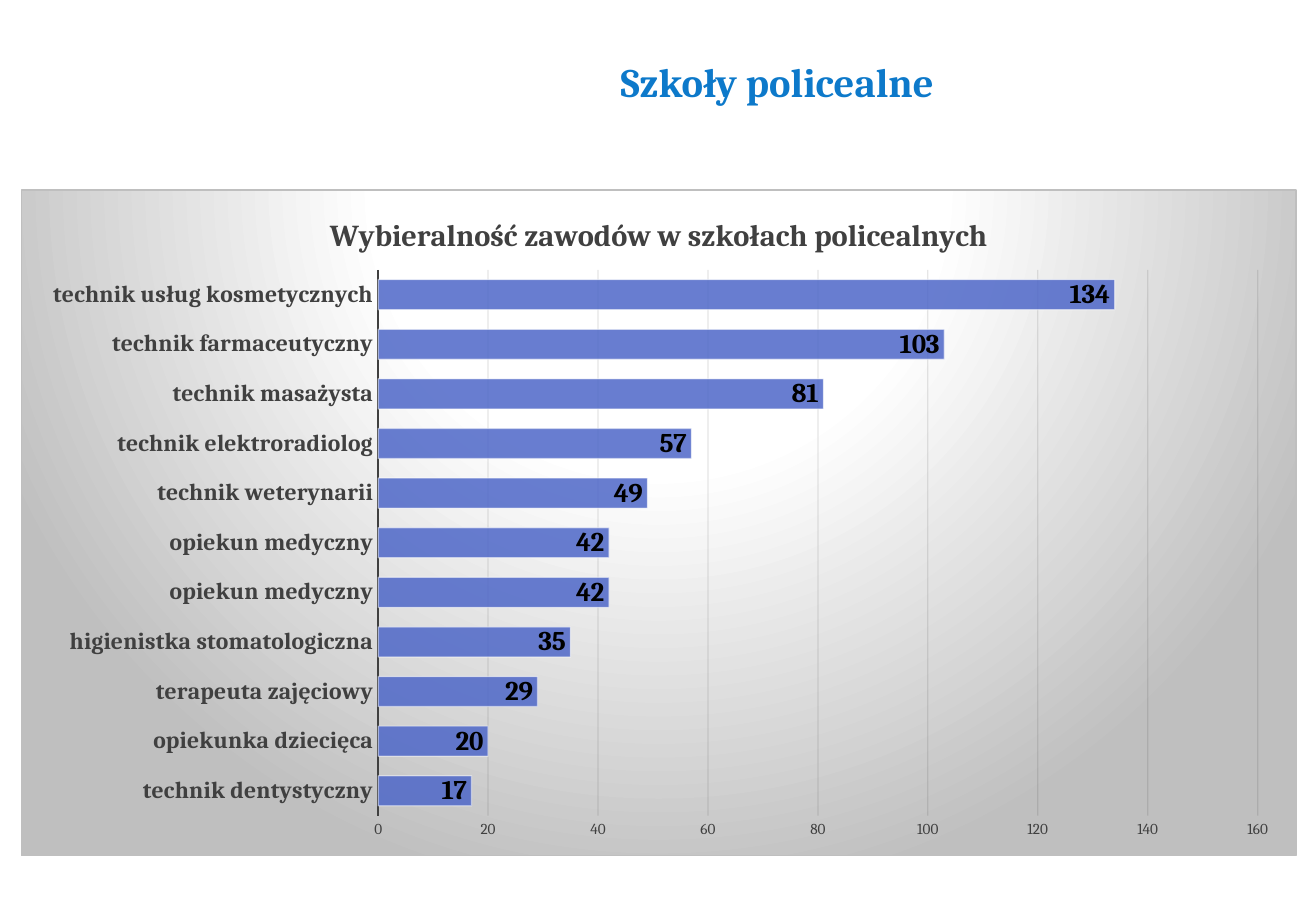
import lxml.etree
import pptx
import pptx.chart.data
import pptx.dml.color
import pptx.enum.chart
import pptx.enum.text
import pptx.oxml
import pptx.oxml.ns
import pptx.util
from pptx.util import Inches

RGBColor = pptx.dml.color.RGBColor
TITLE_BLUE = RGBColor(0x0D, 0x79, 0xCA)
BAR_BLUE = RGBColor(0x4E, 0x67, 0xC8)
DARK_GRAY = RGBColor(0x40, 0x40, 0x40)
GRID_BLACK = RGBColor(0x0D, 0x0D, 0x0D)
EDGE_GRAY = RGBColor(0xBF, 0xBF, 0xBF)
WHITE = RGBColor(0xFF, 0xFF, 0xFF)
BLACK = RGBColor(0x00, 0x00, 0x00)
FONT_NAME = "Cambria"

PROFESSIONS = [
    ("technik dentystyczny", 17),
    ("opiekunka dziecięca", 20),
    ("terapeuta zajęciowy", 29),
    ("higienistka stomatologiczna", 35),
    ("opiekun medyczny", 42),
    ("opiekun medyczny", 42),
    ("technik weterynarii", 49),
    ("technik elektroradiolog", 57),
    ("technik masażysta", 81),
    ("technik farmaceutyczny", 103),
    ("technik usług kosmetycznych", 134),
]


def format_font(font, size, color, bold=False):
    font.name = FONT_NAME
    font.size = pptx.util.Pt(size)
    font.bold = bold
    font.color.rgb = color


def write_text(text_frame, text, **font_format):
    paragraph = text_frame.paragraphs[0]
    paragraph.alignment = pptx.enum.text.PP_ALIGN.CENTER
    run = paragraph.add_run()
    run.text = text
    format_font(run.font, **font_format)


def format_line(line, color, width):
    line.color.rgb = color
    line.width = pptx.util.Pt(width)


def set_opacity(element, query, percent):
    for color in element.xpath(query):
        alpha = lxml.etree.SubElement(color, pptx.oxml.ns.qn("a:alpha"))
        alpha.set("val", str(percent * 1000))


def set_chart_background(chart):
    """Radial gradient and thin border behind the whole chart."""
    stops = "".join(
        f'<a:gs pos="{position * 1000}"><a:srgbClr val="{color}"/></a:gs>'
        for position, color in [(0, WHITE), (39, WHITE), (100, EDGE_GRAY)]
    )
    properties = pptx.oxml.parse_xml(
        f'<c:spPr {pptx.oxml.ns.nsdecls("c", "a")}>'
        f'<a:gradFill><a:gsLst>{stops}</a:gsLst><a:path path="circle">'
        '<a:fillToRect l="50000" t="-80000" r="50000" b="180000"/></a:path></a:gradFill>'
        f'<a:ln w="9525"><a:solidFill><a:srgbClr val="{EDGE_GRAY}"/></a:solidFill></a:ln>'
        "</c:spPr>"
    )
    chart.element.xpath("c:chart")[0].addnext(properties)


def set_plot_box(chart, **fractions):
    """Place the inner plot area as fractions of the chart box."""
    values = "".join(f'<c:{key} val="{value}"/>' for key, value in fractions.items())
    layout = pptx.oxml.parse_xml(
        f'<c:layout {pptx.oxml.ns.nsdecls("c")}><c:manualLayout>'
        '<c:layoutTarget val="inner"/><c:xMode val="edge"/><c:yMode val="edge"/>'
        f"{values}</c:manualLayout></c:layout>"
    )
    plot_area = chart.element.xpath("c:chart/c:plotArea")[0]
    for old_layout in plot_area.xpath("c:layout"):
        plot_area.remove(old_layout)
    plot_area.insert(0, layout)


def add_title(slide, left, top, width, height):
    title = slide.shapes.title
    title.left, title.top, title.width, title.height = left, top, width, height
    title.text_frame.vertical_anchor = pptx.enum.text.MSO_ANCHOR.MIDDLE
    write_text(title.text_frame, "Szkoły policealne", size=24, color=TITLE_BLUE, bold=True)


def add_professions_chart(slide, left, top, width, height):
    chart_data = pptx.chart.data.CategoryChartData()
    chart_data.categories = [name for name, count in PROFESSIONS]
    chart_data.add_series("Series 1", [count for name, count in PROFESSIONS])
    chart = slide.shapes.add_chart(
        pptx.enum.chart.XL_CHART_TYPE.BAR_CLUSTERED, left, top, width, height, chart_data
    ).chart
    format_font(chart.font, size=10, color=BLACK)
    chart.has_legend = False
    set_chart_background(chart)
    set_plot_box(chart, x=0.28, y=0.12, w=0.69, h=0.82)

    # Chart title
    chart.has_title = True
    chart.chart_title.include_in_layout = False
    write_text(
        chart.chart_title.text_frame,
        "Wybieralność zawodów w szkołach policealnych",
        size=18, color=DARK_GRAY, bold=True,
    )

    # Axes and grid
    category_axis, value_axis = chart.category_axis, chart.value_axis
    for axis in (category_axis, value_axis):
        axis.major_tick_mark = pptx.enum.chart.XL_TICK_MARK.NONE
        axis.minor_tick_mark = pptx.enum.chart.XL_TICK_MARK.NONE
    format_font(category_axis.tick_labels.font, size=14, color=DARK_GRAY, bold=True)
    format_line(category_axis.format.line, DARK_GRAY, 1.5)
    format_font(value_axis.tick_labels.font, size=9, color=DARK_GRAY)
    value_axis.format.line.fill.background()
    value_axis.minimum_scale, value_axis.maximum_scale = 0, 160
    value_axis.major_unit = 20
    value_axis.has_major_gridlines = True
    gridlines = value_axis.major_gridlines.format.line
    format_line(gridlines, GRID_BLACK, 0.75)
    set_opacity(chart.element, "//c:majorGridlines//a:srgbClr", 10)

    # Bars
    plot = chart.plots[0]
    plot.gap_width = 65
    plot.vary_by_categories = False
    bars = plot.series[0]
    bars.format.fill.solid()
    bars.format.fill.fore_color.rgb = BAR_BLUE
    format_line(bars.format.line, WHITE, 0.75)
    set_opacity(chart.element, "//c:ser/c:spPr/a:solidFill/a:srgbClr", 85)
    set_opacity(chart.element, "//c:ser/c:spPr/a:ln//a:srgbClr", 50)

    # Value labels
    labels = bars.data_labels
    labels.show_value = True
    labels.position = pptx.enum.chart.XL_LABEL_POSITION.INSIDE_END
    format_font(labels.font, size=16, color=BLACK, bold=True)


def main():
    presentation = pptx.Presentation()
    presentation.slide_width = Inches(10.83)
    presentation.slide_height = Inches(7.5)
    slide = presentation.slides.add_slide(presentation.slide_layouts[5])
    add_title(slide, Inches(2.12), Inches(0.16), Inches(8.55), Inches(1.02))
    add_professions_chart(slide, Inches(0.17), Inches(1.56), Inches(10.5), Inches(5.49))
    presentation.save("out.pptx")


if __name__ == "__main__":
    main()
